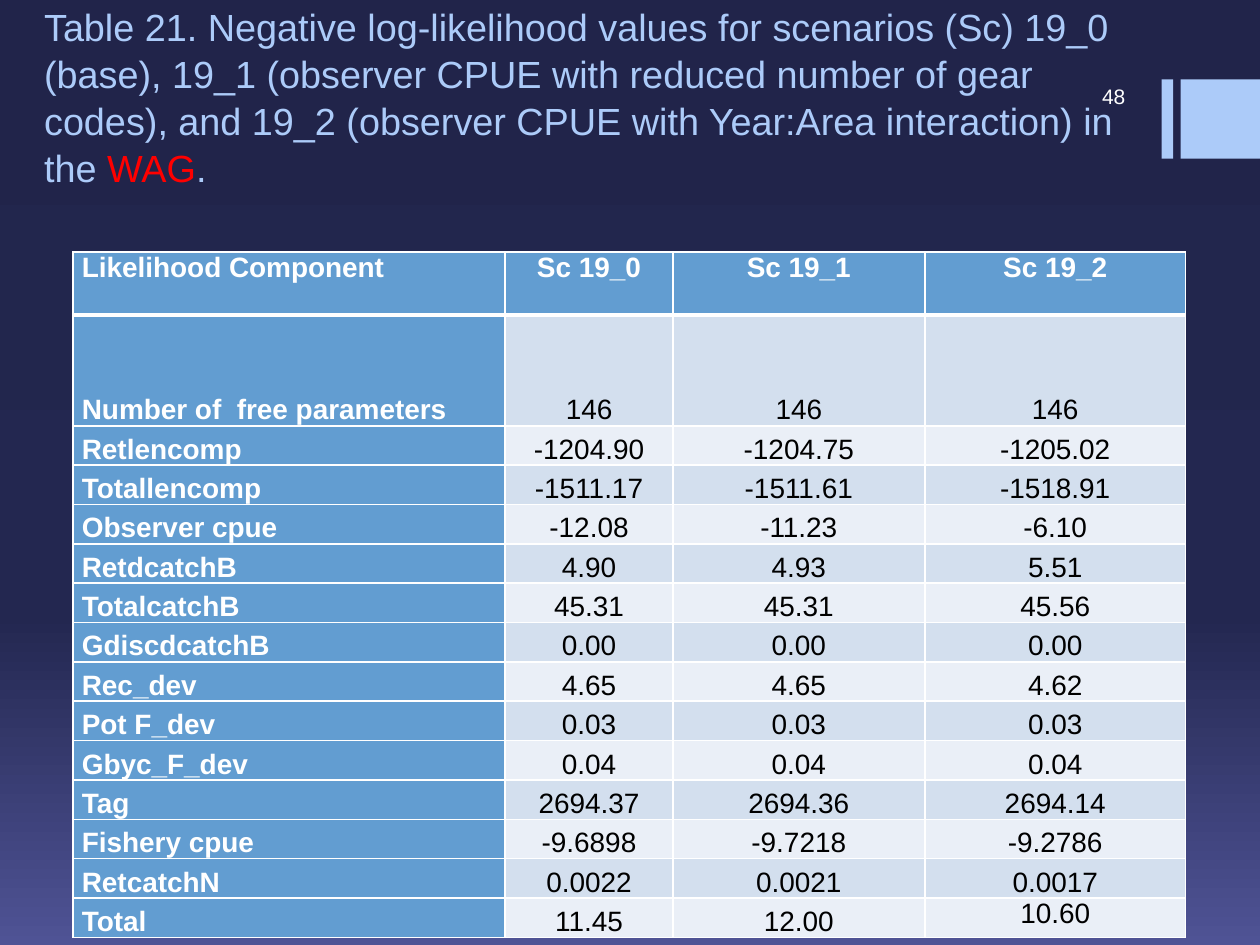
from copy import deepcopy
from typing import NamedTuple

from lxml.etree import SubElement
from pptx import Presentation
from pptx.dml.color import RGBColor
from pptx.enum.shapes import MSO_SHAPE
from pptx.enum.text import MSO_ANCHOR, MSO_AUTO_SIZE, PP_ALIGN
from pptx.oxml.ns import qn
from pptx.util import Inches, Pt

WIDTH, HEIGHT = Inches(10), Inches(7.5)
GRID_COLUMNS, GRID_ROWS = 1000, 750
FONT = "Arial"
COLORS = {
    "night": "21244A", "dusk": "232750", "violet": "4F5395",
    "sky": "ACCBF9", "red": "FF0000", "white": "FFFFFF", "black": "000000",
    "heading": "629DD1", "dark band": "D3DFEE", "light band": "EAEFF7",
}
BACKGROUND_STOPS = [(0, "night"), (0.65, "dusk"), (1, "violet")]


class Box(NamedTuple):
    """An area in grid columns and rows."""
    column: int
    row: int
    columns: int
    rows: int


class Likelihood(NamedTuple):
    component: str
    base: str
    reduced_gear: str
    year_area: str


ACCENT_BARS = [Box(922, 63, 9, 63), Box(937, 63, 63, 63)]
TITLE_AREA = Box(25, 30, 892, 126)
NUMBER_AREA = Box(800, 60, 103, 33)
TABLE_AREA = Box(58, 200, 883, 544)
TABLE_COLUMNS = [343, 133, 200, 207]
HEADER_ROWS, PARAMETER_ROWS = 50, 88

TITLE_RUNS = [
    ("Table 21. Negative log-likelihood values for scenarios (Sc) 19_0 (base), "
     "19_1 (observer CPUE with reduced number of gear codes), and 19_2 "
     "(observer CPUE with Year:Area interaction) in the ", "sky"),
    ("WAG", "red"),
    (".", "sky"),
]
LIKELIHOODS = [
    Likelihood("Likelihood Component", "Sc 19_0", "Sc 19_1", "Sc 19_2"),
    Likelihood("Number of  free parameters", "146", "146", "146"),
    Likelihood("Retlencomp", "-1204.90", "-1204.75", "-1205.02"),
    Likelihood("Totallencomp", "-1511.17", "-1511.61", "-1518.91"),
    Likelihood("Observer cpue", "-12.08", "-11.23", "-6.10"),
    Likelihood("RetdcatchB", "4.90", "4.93", "5.51"),
    Likelihood("TotalcatchB", "45.31", "45.31", "45.56"),
    Likelihood("GdiscdcatchB", "0.00", "0.00", "0.00"),
    Likelihood("Rec_dev", "4.65", "4.65", "4.62"),
    Likelihood("Pot F_dev", "0.03", "0.03", "0.03"),
    Likelihood("Gbyc_F_dev", "0.04", "0.04", "0.04"),
    Likelihood("Tag", "2694.37", "2694.36", "2694.14"),
    Likelihood("Fishery cpue", "-9.6898", "-9.7218", "-9.2786"),
    Likelihood("RetcatchN", "0.0022", "0.0021", "0.0017"),
    Likelihood("Total", "11.45", "12.00", "10.60"),
]


def across(columns: float) -> int:
    return round(WIDTH * columns / GRID_COLUMNS)


def down(rows: float) -> int:
    return round(HEIGHT * rows / GRID_ROWS)


def place(box: Box) -> tuple[int, int, int, int]:
    return across(box.column), down(box.row), across(box.columns), down(box.rows)


def color(name: str) -> RGBColor:
    return RGBColor.from_string(COLORS[name])


def apply(target, formats: dict) -> None:
    for attribute, value in formats.items():
        setattr(target, attribute, value)


def add_run(paragraph, text: str, size: float, color_name: str, bold: bool = False) -> None:
    run = paragraph.add_run()
    run.text = text
    apply(run.font, {"name": FONT, "size": Pt(size), "bold": bold})
    run.font.color.rgb = color(color_name)


def paint_background(slide) -> None:
    fill = slide.background.fill
    fill.gradient()
    fill.gradient_angle = 270
    first_stop = slide.element.find(".//" + qn("a:gs"))
    first_stop.addnext(deepcopy(first_stop))
    for stop, (position, name) in zip(fill.gradient_stops, BACKGROUND_STOPS):
        stop.position = position
        stop.color.rgb = color(name)


def add_accent_bar(slide, box: Box) -> None:
    bar = slide.shapes.add_shape(MSO_SHAPE.RECTANGLE, *place(box))
    bar.shadow.inherit = False
    bar.fill.solid()
    bar.fill.fore_color.rgb = color("sky")
    bar.line.fill.background()


def fill_title(slide) -> None:
    title = slide.shapes.title
    apply(title, dict(zip(("left", "top", "width", "height"), place(TITLE_AREA))))
    apply(title.text_frame, {"word_wrap": True, "auto_size": MSO_AUTO_SIZE.NONE,
                             "vertical_anchor": MSO_ANCHOR.BOTTOM})
    paragraph = title.text_frame.paragraphs[0]
    apply(paragraph, {"alignment": PP_ALIGN.LEFT, "line_spacing": 1.04})
    for text, color_name in TITLE_RUNS:
        add_run(paragraph, text, 21.6, color_name)


def add_page_number(slide, number: str) -> None:
    frame = slide.shapes.add_textbox(*place(NUMBER_AREA)).text_frame
    apply(frame, {"word_wrap": True, "vertical_anchor": MSO_ANCHOR.MIDDLE})
    frame.paragraphs[0].alignment = PP_ALIGN.RIGHT
    add_run(frame.paragraphs[0], number, 12, "white")


def add_borders(cell, widths: dict[str, float]) -> None:
    """Draw white cell edges, which must precede the fill in the cell's XML."""
    properties = cell._tc.get_or_add_tcPr()
    for edge, width in widths.items():
        line = SubElement(properties, qn(f"a:{edge}"), w=str(Pt(width)))
        solid = SubElement(line, qn("a:solidFill"))
        SubElement(solid, qn("a:srgbClr"), val=COLORS["white"])


def fill_cell(cell, text: str, row: int, column: int) -> None:
    is_header = row == 0
    is_heading = is_header or column == 0
    is_last = (row, column) == (len(LIKELIHOODS) - 1, len(TABLE_COLUMNS) - 1)
    band = "dark band" if row % 2 else "light band"
    apply(cell, {
        "margin_left": across(7), "margin_right": across(7),
        "margin_top": 0, "margin_bottom": 0,
        "vertical_anchor": MSO_ANCHOR.TOP if is_header or is_last else MSO_ANCHOR.BOTTOM,
    })
    add_borders(cell, {"lnL": 1, "lnR": 1, "lnT": 3 if row == 1 else 1,
                       "lnB": 3 if is_header else 1})
    cell.fill.solid()
    cell.fill.fore_color.rgb = color("heading" if is_heading else band)
    paragraph = cell.text_frame.paragraphs[0]
    paragraph.alignment = PP_ALIGN.CENTER if column else PP_ALIGN.LEFT
    if is_header:
        paragraph.space_after = Pt(10)
    add_run(paragraph, text, 16, "white" if is_heading else "black", is_heading)


def add_likelihood_table(slide) -> None:
    table = slide.shapes.add_table(
        len(LIKELIHOODS), len(TABLE_COLUMNS), *place(TABLE_AREA)).table
    for column, columns in zip(table.columns, TABLE_COLUMNS):
        column.width = across(columns)
    value_rows = (TABLE_AREA.rows - HEADER_ROWS - PARAMETER_ROWS) / (len(LIKELIHOODS) - 2)
    heights = [HEADER_ROWS, PARAMETER_ROWS] + [value_rows] * (len(LIKELIHOODS) - 2)
    for row, (likelihood, height) in enumerate(zip(LIKELIHOODS, heights)):
        table.rows[row].height = down(height)
        for column, text in enumerate(likelihood):
            fill_cell(table.cell(row, column), text, row, column)


def main() -> None:
    presentation = Presentation()
    apply(presentation, {"slide_width": WIDTH, "slide_height": HEIGHT})
    slide = presentation.slides.add_slide(presentation.slide_layouts[5])
    paint_background(slide)
    for box in ACCENT_BARS:
        add_accent_bar(slide, box)
    fill_title(slide)
    add_page_number(slide, "48")
    add_likelihood_table(slide)
    presentation.save("out.pptx")


if __name__ == "__main__":
    main()
